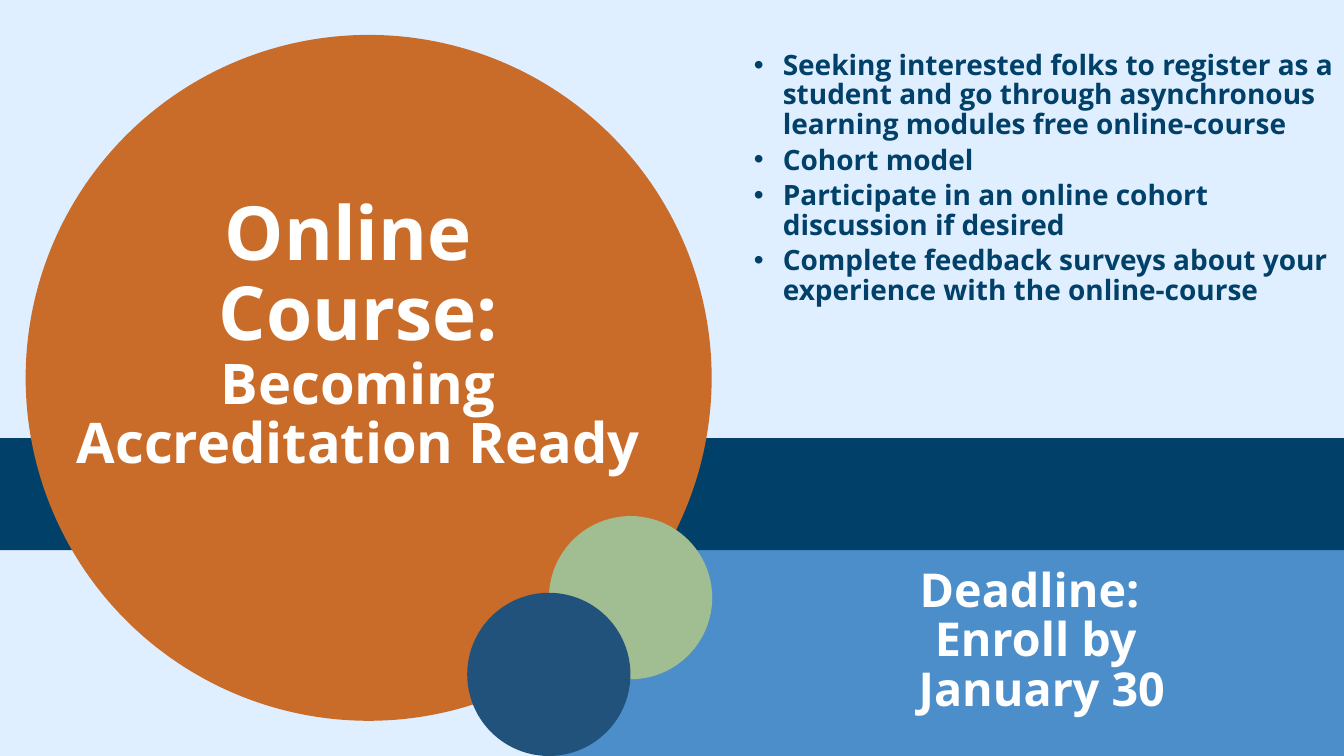
"""Build the online course announcement slide."""

import dataclasses
import typing

import lxml.etree
import pptx
import pptx.dml.color
import pptx.enum.shapes
import pptx.enum.text
import pptx.oxml.ns
import pptx.slide
import pptx.text.text
import pptx.util

Cm = pptx.util.Cm
Pt = pptx.util.Pt
MSO_SHAPE = pptx.enum.shapes.MSO_SHAPE
MSO_ANCHOR = pptx.enum.text.MSO_ANCHOR
PP_ALIGN = pptx.enum.text.PP_ALIGN


@dataclasses.dataclass(frozen=True)
class Theme:
    font: str = "Open Sans"
    background: str = "E0EFFF"
    navy: str = "014169"
    sky: str = "4C8EC9"
    orange: str = "C96C29"
    green: str = "A1BE92"
    blue: str = "20527C"
    white: str = "FFFFFF"
    title_size: int = 80
    subtitle_size: int = 60
    deadline_size: int = 50
    bullet_size: int = 30


class Box(typing.NamedTuple):
    left: float
    top: float
    width: float
    height: float


class Panel(typing.NamedTuple):
    kind: MSO_SHAPE
    box: Box
    color: str


class Line(typing.NamedTuple):
    text: str
    size: int


@dataclasses.dataclass(frozen=True)
class TextBlock:
    box: Box
    paragraphs: list[list[Line]]
    color: str
    paragraph_format: dict[str, typing.Any]
    anchor: MSO_ANCHOR = MSO_ANCHOR.TOP
    bulleted: bool = False
    gap: float = 0


THEME = Theme()
SLIDE_WIDTH = 50.8
SLIDE_HEIGHT = 28.58
SMALL_CIRCLE = 6.17

PANELS = [
    Panel(MSO_SHAPE.RECTANGLE, Box(20.75, 17, 30.05, 11.58), THEME.sky),
    Panel(MSO_SHAPE.RECTANGLE, Box(0, 16.56, SLIDE_WIDTH, 4.24), THEME.navy),
    Panel(MSO_SHAPE.OVAL, Box(0.97, 1.32, 25.93, 25.93), THEME.orange),
    Panel(MSO_SHAPE.OVAL, Box(20.75, 19.51, SMALL_CIRCLE, SMALL_CIRCLE), THEME.green),
    Panel(MSO_SHAPE.OVAL, Box(17.66, 22.41, SMALL_CIRCLE, SMALL_CIRCLE), THEME.blue),
]

BULLETS = [
    "Seeking interested folks to register as a student and go through "
    "asynchronous learning modules free online-course",
    "Cohort model",
    "Participate in an online cohort discussion if desired",
    "Complete feedback surveys about your experience with the online-course",
]
DEADLINE = ["Deadline:  ", "Enroll by ", "January 30"]

TEXT_BLOCKS = [
    TextBlock(
        Box(2.11, 11.13, 22.86, 3.18),
        [[
            Line("Online ", THEME.title_size),
            Line("Course:", THEME.title_size),
            Line("Becoming Accreditation Ready", THEME.subtitle_size),
        ]],
        THEME.white,
        {"alignment": PP_ALIGN.CENTER, "line_spacing": 0.89},
        anchor=MSO_ANCHOR.MIDDLE,
    ),
    TextBlock(
        Box(27.13, 1.83, 23.52, 12.57),
        [[Line(text, THEME.bullet_size)] for text in BULLETS],
        THEME.navy,
        {"alignment": PP_ALIGN.LEFT, "line_spacing": 0.88},
        bulleted=True,
        gap=6.5,
    ),
    TextBlock(
        Box(29.97, 21.36, 18.82, 6.81),
        [[Line(text, THEME.deadline_size)] for text in DEADLINE],
        THEME.white,
        {"alignment": PP_ALIGN.CENTER, "line_spacing": 0.88},
    ),
]


def rgb(color: str) -> pptx.dml.color.RGBColor:
    return pptx.dml.color.RGBColor.from_string(color)


def apply_format(target: typing.Any, values: dict[str, typing.Any]) -> None:
    for name, value in values.items():
        setattr(target, name, value)


def draw_panel(slide: pptx.slide.Slide, panel: Panel) -> None:
    shape = slide.shapes.add_shape(panel.kind, *map(Cm, panel.box))
    shape.shadow.inherit = False
    shape.fill.solid()
    shape.fill.fore_color.rgb = rgb(panel.color)
    shape.line.fill.background()


def add_bullet(paragraph: pptx.text.text._Paragraph) -> None:
    properties = paragraph._p.get_or_add_pPr()
    properties.set("marL", str(Cm(2.21)))
    properties.set("indent", str(Cm(-1.09)))
    tag = pptx.oxml.ns.qn
    lxml.etree.SubElement(properties, tag("a:buFont"), typeface="Arial")
    lxml.etree.SubElement(properties, tag("a:buChar"), char="•")


def draw_text(slide: pptx.slide.Slide, block: TextBlock) -> None:
    frame = slide.shapes.add_textbox(*map(Cm, block.box)).text_frame
    apply_format(frame, {"word_wrap": True, "vertical_anchor": block.anchor})
    for index, lines in enumerate(block.paragraphs):
        paragraph = frame.add_paragraph() if index else frame.paragraphs[0]
        if block.bulleted:
            add_bullet(paragraph)
        space_before = Pt(block.gap if index else 0)
        apply_format(paragraph, block.paragraph_format | {"space_before": space_before})
        for position, line in enumerate(lines):
            if position:
                paragraph.add_line_break()
            run = paragraph.add_run()
            run.text = line.text
            apply_format(run.font, {"name": THEME.font, "size": Pt(line.size), "bold": True})
            run.font.color.rgb = rgb(block.color)


def main() -> None:
    presentation = pptx.Presentation()
    presentation.slide_width = Cm(SLIDE_WIDTH)
    presentation.slide_height = Cm(SLIDE_HEIGHT)
    slide = presentation.slides.add_slide(presentation.slide_layouts[6])
    slide.background.fill.solid()
    slide.background.fill.fore_color.rgb = rgb(THEME.background)
    for panel in PANELS:
        draw_panel(slide, panel)
    for block in TEXT_BLOCKS:
        draw_text(slide, block)
    presentation.save("out.pptx")


if __name__ == "__main__":
    main()
